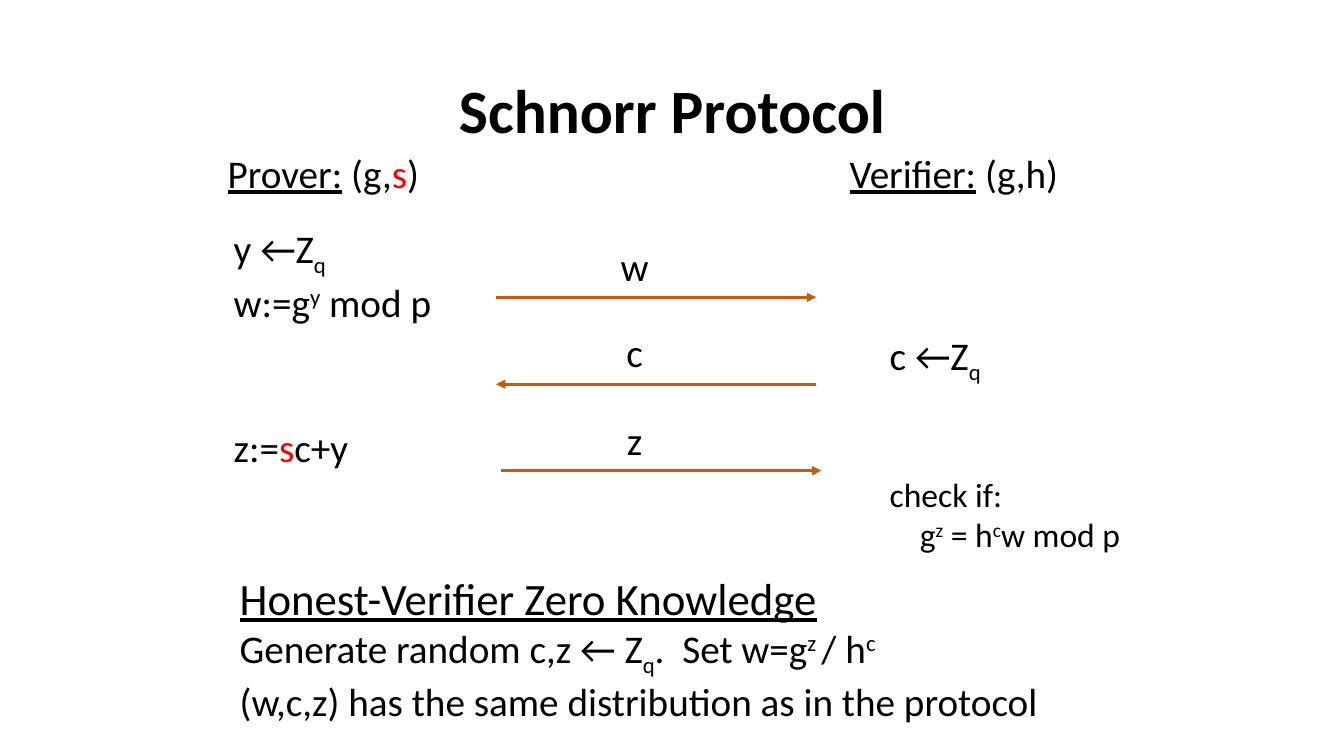
"""Build the Schnorr Protocol slide."""
from lxml.etree import SubElement
from pptx import Presentation
from pptx.dml.color import RGBColor
from pptx.enum.shapes import MSO_CONNECTOR as Connector
from pptx.enum.text import MSO_ANCHOR as Anchor, PP_ALIGN as Align
from pptx.oxml.ns import qn
from pptx.util import Cm, Pt

BASELINES = {"sub": "-25000", "sup": "30000"}


def color(value):
    return RGBColor.from_string(value)


def add_text(left, top, width, height, lines, align=Align.LEFT):
    box = slide.shapes.add_textbox(Cm(left), Cm(top), Cm(width), Cm(height))
    frame = box.text_frame
    frame.word_wrap = True
    for index, (size, spans) in enumerate(lines):
        para = frame.add_paragraph() if index else frame.paragraphs[0]
        para.alignment = align
        for text, style in spans:
            span = para.add_run()
            span.text = text
            span.font.name = "Calibri"
            span.font.size = Pt(size)
            span.font.color.rgb = color("FF0000" if style == "red" else "000000")
            span.font.bold = style == "bold"
            span.font.underline = style == "under"
            if style in BASELINES:
                span.font._element.set("baseline", BASELINES[style])
    return frame


deck = Presentation()
deck.slide_width, deck.slide_height = Cm(33.87), Cm(19.05)
slide = deck.slides.add_slide(deck.slide_layouts[6])

title = add_text(2.34, 1.02, 29.21, 3.68, [(44, [("Schnorr Protocol", "bold")])], Align.CENTER)
title.vertical_anchor = Anchor.MIDDLE
title.paragraphs[0].line_spacing = 0.9

add_text(5.49, 3.63, 6.22, 1.45, [
    (28, [("Prover:", "under"), (" (g,", ""), ("s", "red"), (")", "")])])
add_text(21.16, 3.63, 6.22, 1.45, [(28, [("Verifier:", "under"), (" (g,h)", "")])])

add_text(5.64, 5.54, 6.5, 2.64, [
    (28, [("y ←Z", ""), ("q", "sub")]),
    (28, [("w:=g", ""), ("y", "sup"), (" mod p", "")])])
add_text(5.64, 10.54, 4.5, 1.45, [(28, [("z:=", ""), ("s", "red"), ("c+y", "")])])

add_text(22.17, 8.23, 4, 1.45, [(28, [("c ←Z", ""), ("q", "sub")])])
check = add_text(22.17, 11.81, 7.5, 2.31, [
    (24, [("check if:", "")]),
    (24, [("g", ""), ("z", "sup"), (" = h", ""), ("c", "sup"), ("w mod p", "")])])
check.paragraphs[1]._p.get_or_add_pPr().set("marL", str(Cm(0.76)))

messages = [
    ("w", 5.97, 12.5, 20.57, 7.49),
    ("c", 8.15, 20.57, 12.5, 9.68),
    ("z", 10.36, 12.62, 20.7, 11.86),
]
for message, label_top, start, end, arrow_top in messages:
    add_text(14.05, label_top, 3.89, 1.45, [(28, [(message, "")])], Align.CENTER)
    arrow = slide.shapes.add_connector(
        Connector.STRAIGHT, Cm(start), Cm(arrow_top), Cm(end), Cm(arrow_top))
    arrow.line.color.rgb = color("C55A11")
    arrow.line.width = Pt(2.25)
    SubElement(arrow.line._get_or_add_ln(), qn("a:tailEnd"), type="triangle")
    SubElement(arrow._element.spPr, qn("a:effectLst"))

add_text(5.79, 14.25, 21.21, 4.01, [
    (32, [("Honest-Verifier Zero Knowledge", "under")]),
    (28, [("Generate random c,z ← Z", ""), ("q", "sub"), (".  Set w=g", ""),
          ("z ", "sup"), ("/ h", ""), ("c", "sup")]),
    (28, [("(w,c,z) has the same distribution as in the protocol", "")])])

deck.save("out.pptx")
